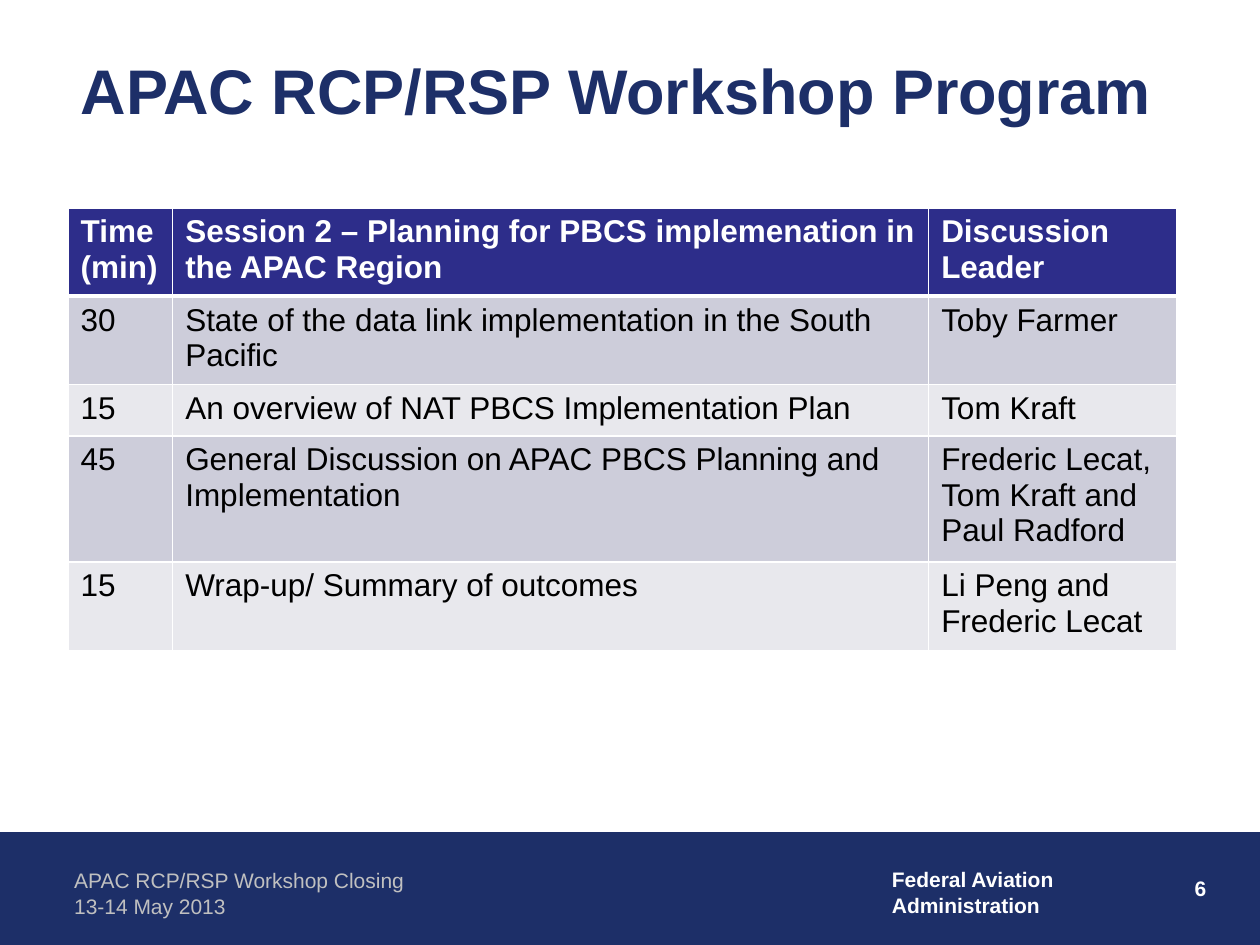
from lxml import etree
from pptx import Presentation, util as u
from pptx.dml.color import RGBColor
from pptx.enum import shapes, text
from pptx.oxml import ns

NAVY = RGBColor(0x1D, 0x2F, 0x68)
INDIGO = RGBColor(0x2D, 0x2D, 0x8A)
BAND_DARK = RGBColor(0xCD, 0xCD, 0xDA)
BAND_LIGHT = RGBColor(0xE8, 0xE8, 0xED)
SILVER = RGBColor(0xC0, 0xC0, 0xC0)
WHITE = RGBColor(0xFF, 0xFF, 0xFF)
BLACK = RGBColor(0, 0, 0)

LEFT = text.PP_ALIGN.LEFT
RIGHT = text.PP_ALIGN.RIGHT
COLUMN_WIDTHS = (59.8, 432, 141.8)
ROW_HEIGHTS = (50.4, 50.4, 29.5, 72, 50.4)
PROGRAM = (
    ("Time\n(min)", "Session 2 – Planning for PBCS implemenation in the APAC Region",
     "Discussion Leader"),
    ("30", "State of the data link implementation in the South Pacific", "Toby Farmer"),
    ("15", "An overview of NAT PBCS Implementation Plan", "Tom Kraft"),
    ("45", "General Discussion on APAC PBCS Planning and Implementation",
     "Frederic Lecat,\nTom Kraft and Paul Radford"),
    ("15", "Wrap-up/ Summary of outcomes", "Li Peng and Frederic Lecat"),
)


def points(*values):
    return [u.Pt(value) for value in values]


def write_text(frame, words, size, color, bold=False, align=LEFT):
    frame.text = words
    style = {"name": "Arial", "size": u.Pt(size), "bold": bold}
    for para in frame.paragraphs:
        para.alignment = align
        para.space_before = u.Pt(0)
        for span in para.runs:
            for key, value in style.items():
                setattr(span.font, key, value)
            span.font.color.rgb = color


def add_title(page, words):
    title = page.shapes.title
    title.left, title.top, title.width, title.height = points(38.9, 17.3, 633.6, 67)
    title.text_frame.word_wrap = True
    title.text_frame.vertical_anchor = text.MSO_ANCHOR.MIDDLE
    write_text(title.text_frame, words, 36, NAVY, bold=True)


def add_band(page):
    band = page.shapes.add_shape(
        shapes.MSO_SHAPE.RECTANGLE, *points(0, 475.9, 720, 64.1))
    band.shadow.inherit = False
    band.fill.solid()
    band.fill.fore_color.rgb = NAVY
    band.line.color.rgb = NAVY
    band.line.width = u.Pt(0.75)


def add_label(page, place, words, color, bold=False, align=LEFT, wrap=True):
    box = page.shapes.add_textbox(*points(*place))
    box.text_frame.word_wrap = wrap
    write_text(box.text_frame, words, 12, color, bold, align)


def set_borders(cell, top, bottom):
    properties = cell._tc.get_or_add_tcPr()
    widths = {"a:lnL": 1, "a:lnR": 1, "a:lnT": top, "a:lnB": bottom}
    for index, (tag, width) in enumerate(widths.items()):
        line = etree.Element(ns.qn(tag), w=str(u.Pt(width)))
        fill = etree.SubElement(line, ns.qn("a:solidFill"))
        etree.SubElement(fill, ns.qn("a:srgbClr"), val=str(WHITE))
        properties.insert(index, line)


def add_program(page):
    frame = page.shapes.add_table(
        len(PROGRAM), len(COLUMN_WIDTHS),
        *points(38.9, 118.8, sum(COLUMN_WIDTHS), sum(ROW_HEIGHTS)))
    table = frame.table
    for column, width in zip(table.columns, COLUMN_WIDTHS):
        column.width = u.Pt(width)
    for row, height in zip(table.rows, ROW_HEIGHTS):
        row.height = u.Pt(height)
    for index, entries in enumerate(PROGRAM):
        header = index == 0
        band = BAND_DARK if index % 2 else BAND_LIGHT
        for cell, words in zip(table.rows[index].cells, entries):
            cell.fill.solid()
            cell.fill.fore_color.rgb = INDIGO if header else band
            write_text(cell.text_frame, words, 18, WHITE if header else BLACK, header)
            set_borders(cell, 3 if index == 1 else 1, 3 if header else 1)


def main():
    deck = Presentation()
    deck.slide_width, deck.slide_height = points(720, 540)
    page = deck.slides.add_slide(deck.slide_layouts[5])
    add_band(page)
    add_label(page, (35.3, 492.5, 234.7, 36),
              "APAC RCP/RSP Workshop Closing\v13-14 May 2013", SILVER)
    add_label(page, (546.5, 496.8, 149.8, 36), "6", WHITE, bold=True, align=RIGHT)
    add_label(page, (502.6, 491.8, 108, 36),
              "Federal Aviation\vAdministration", WHITE, bold=True, wrap=False)
    add_title(page, "APAC RCP/RSP Workshop Program")
    add_program(page)
    deck.save("out.pptx")


if __name__ == "__main__":
    main()
